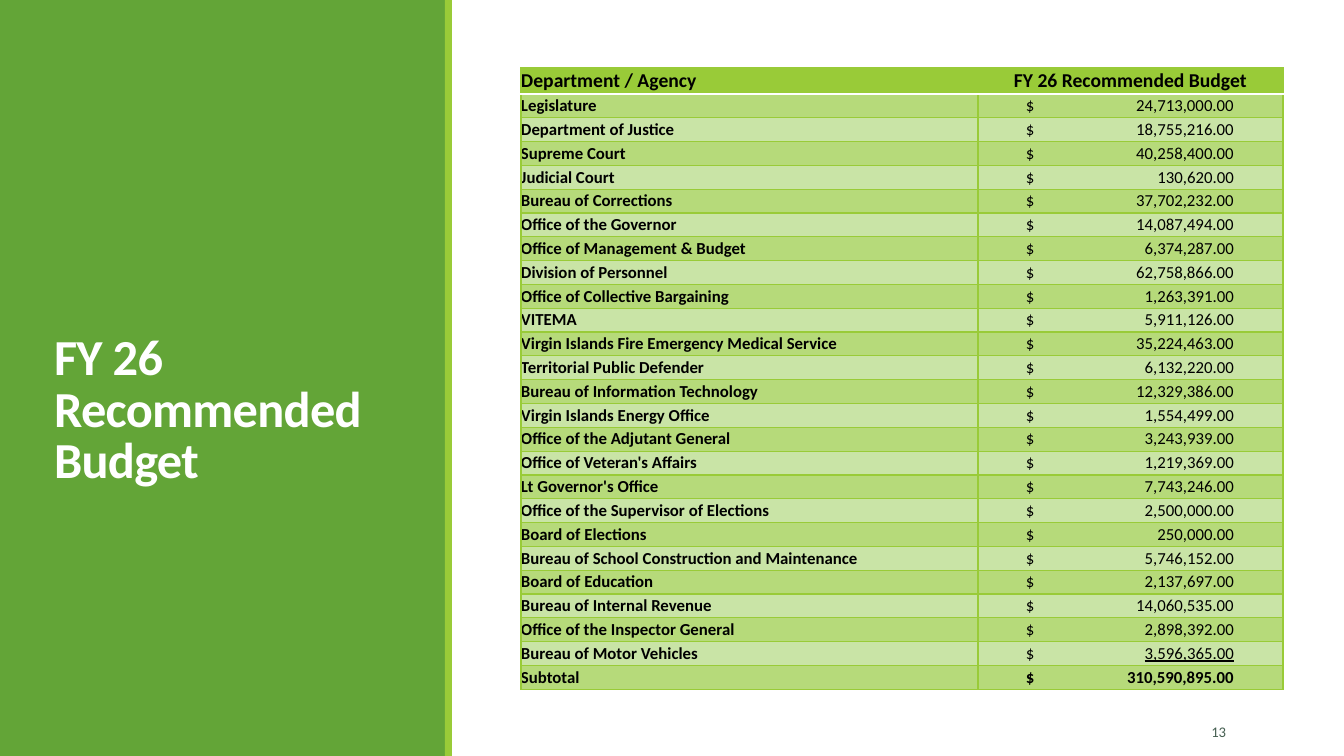
from lxml import etree
from pptx import Presentation
from pptx import util as u
from pptx.dml.color import RGBColor
from pptx.enum import shapes, text
from pptx.oxml.ns import qn

# Content
TITLE = "FY 26 Recommended Budget"
PAGE = "13"
HEADINGS = ("Department / Agency", "FY 26 Recommended Budget")
BUDGETS = [
    ("Legislature", 24713000),
    ("Department of Justice", 18755216),
    ("Supreme Court", 40258400),
    ("Judicial Court", 130620),
    ("Bureau of Corrections", 37702232),
    ("Office of the Governor", 14087494),
    ("Office of Management & Budget", 6374287),
    ("Division of Personnel", 62758866),
    ("Office of Collective Bargaining", 1263391),
    ("VITEMA", 5911126),
    ("Virgin Islands Fire Emergency Medical Service", 35224463),
    ("Territorial Public Defender", 6132220),
    ("Bureau of Information Technology", 12329386),
    ("Virgin Islands Energy Office", 1554499),
    ("Office of the Adjutant General", 3243939),
    ("Office of Veteran's Affairs", 1219369),
    ("Lt Governor's Office", 7743246),
    ("Office of the Supervisor of Elections", 2500000),
    ("Board of Elections", 250000),
    ("Bureau of School Construction and Maintenance", 5746152),
    ("Board of Education", 2137697),
    ("Bureau of Internal Revenue", 14060535),
    ("Office of the Inspector General", 2898392),
    ("Bureau of Motor Vehicles", 3596365),
    ("Subtotal", 310590895),
]

# Colours and font
GREEN = RGBColor(0x63, 0xA5, 0x37)
LIME = RGBColor(0x99, 0xCB, 0x38)
BANDS = (RGBColor(0xB6, 0xDA, 0x7A), RGBColor(0xC9, 0xE4, 0xA6))
SLATE = RGBColor(0x45, 0x5F, 0x51)
BLACK = RGBColor(0, 0, 0)
WHITE = RGBColor(255, 255, 255)
FONT = "Calibri"
LEFT, CENTER, RIGHT = text.PP_ALIGN.LEFT, text.PP_ALIGN.CENTER, text.PP_ALIGN.RIGHT

# Geometry in px
SLIDE_W, SLIDE_H = 1344, 756
TABLE_X, TABLE_Y = 521, 68
COLUMNS = (457, 305)
HEADER_H, BODY_H = 26, 596
DOLLAR_INSET = 48
AMOUNT_TABS = ((20, "l"), (208, "r"))


def px(n):
    return round(n * 12192000 / SLIDE_W)


def write(frame, words, size=12, color=BLACK, bold=False, underline=False,
          align=LEFT, anchor=text.MSO_ANCHOR.MIDDLE):
    """Add a run to the first paragraph of a frame or cell."""
    frame.vertical_anchor = anchor
    paragraph = getattr(frame, "text_frame", frame).paragraphs[0]
    paragraph.alignment = align
    run = paragraph.add_run()
    run.text = words
    font = run.font
    font.name, font.size, font.bold = FONT, u.Pt(size), bold
    font.underline = underline
    font.color.rgb = color
    return paragraph


def add_bar(x, width, color):
    bar = slide.shapes.add_shape(shapes.MSO_SHAPE.RECTANGLE, px(x), 0, px(width), px(SLIDE_H))
    bar.shadow.inherit = False
    bar.fill.solid()
    bar.fill.fore_color.rgb = color
    bar.line.fill.background()


def style_cell(cell, color, bottom=(LIME, 1), inset=0):
    cell.margin_left = px(inset)
    cell.margin_right = cell.margin_top = cell.margin_bottom = 0
    cell.fill.solid()
    cell.fill.fore_color.rgb = color
    edges = {"lnL": (LIME, 1), "lnR": (LIME, 1), "lnT": (LIME, 1), "lnB": bottom}
    properties = cell._tc.get_or_add_tcPr()
    for place, (edge, (line_color, points)) in enumerate(edges.items()):
        line = etree.Element(qn("a:" + edge), w=str(u.Pt(points)))
        fill = etree.SubElement(line, qn("a:solidFill"))
        etree.SubElement(fill, qn("a:srgbClr"), val=str(line_color))
        properties.insert(place, line)


def set_tabs(paragraph, stops):
    tabs = etree.SubElement(paragraph._p.get_or_add_pPr(), qn("a:tabLst"))
    for position, side in stops:
        etree.SubElement(tabs, qn("a:tab"), pos=str(px(position)), algn=side)


deck = Presentation()
deck.slide_width, deck.slide_height = px(SLIDE_W), px(SLIDE_H)
slide = deck.slides.add_slide(deck.slide_layouts[5])

# Side panel and its edge
add_bar(0, 446, GREEN)
add_bar(445, 7, LIME)

# Title, brought in front of the panel
title = slide.shapes.title
title.left, title.top, title.width, title.height = px(44), px(262), px(340), px(232)
title.text_frame.word_wrap = True
title.text_frame.auto_size = text.MSO_AUTO_SIZE.NONE
heading = write(title.text_frame, TITLE, size=36, color=WHITE, bold=True,
                anchor=text.MSO_ANCHOR.BOTTOM)
heading.line_spacing = 0.85
heading.runs[0].font._element.set("spc", "-50")
slide.shapes._spTree.append(title._element)

# Page number
page = slide.shapes.add_textbox(px(1092), px(712), px(144), px(40))
page.text_frame.word_wrap = True
write(page.text_frame, PAGE, size=10.5, color=SLATE, align=RIGHT).space_after = u.Pt(6)

# Budget table
budget = slide.shapes.add_table(
    len(BUDGETS) + 1, len(COLUMNS), px(TABLE_X), px(TABLE_Y),
    px(sum(COLUMNS)), px(HEADER_H + BODY_H)).table
for column, width in zip(budget.columns, COLUMNS):
    column.width = px(width)
for row in budget.rows:
    row.height = px(BODY_H / len(BUDGETS))
budget.rows[0].height = px(HEADER_H)

for column, (words, align) in enumerate(zip(HEADINGS, (LEFT, CENTER))):
    cell = budget.cell(0, column)
    style_cell(cell, LIME, bottom=(WHITE, 1.25))
    write(cell, words, size=14, bold=True, align=align)

last_item = len(BUDGETS) - 2
for index, (agency, amount) in enumerate(BUDGETS):
    name_cell, amount_cell = (budget.cell(index + 1, column) for column in (0, 1))
    band = BANDS[index % 2]
    style_cell(name_cell, band)
    style_cell(amount_cell, band, inset=DOLLAR_INSET)
    write(name_cell, agency, bold=True)
    is_total = index > last_item
    write(amount_cell, "$\t", bold=is_total)
    figure = write(amount_cell, f"\t{amount:,.2f}", bold=is_total, underline=index == last_item)
    set_tabs(figure, AMOUNT_TABS)

deck.save("out.pptx")
